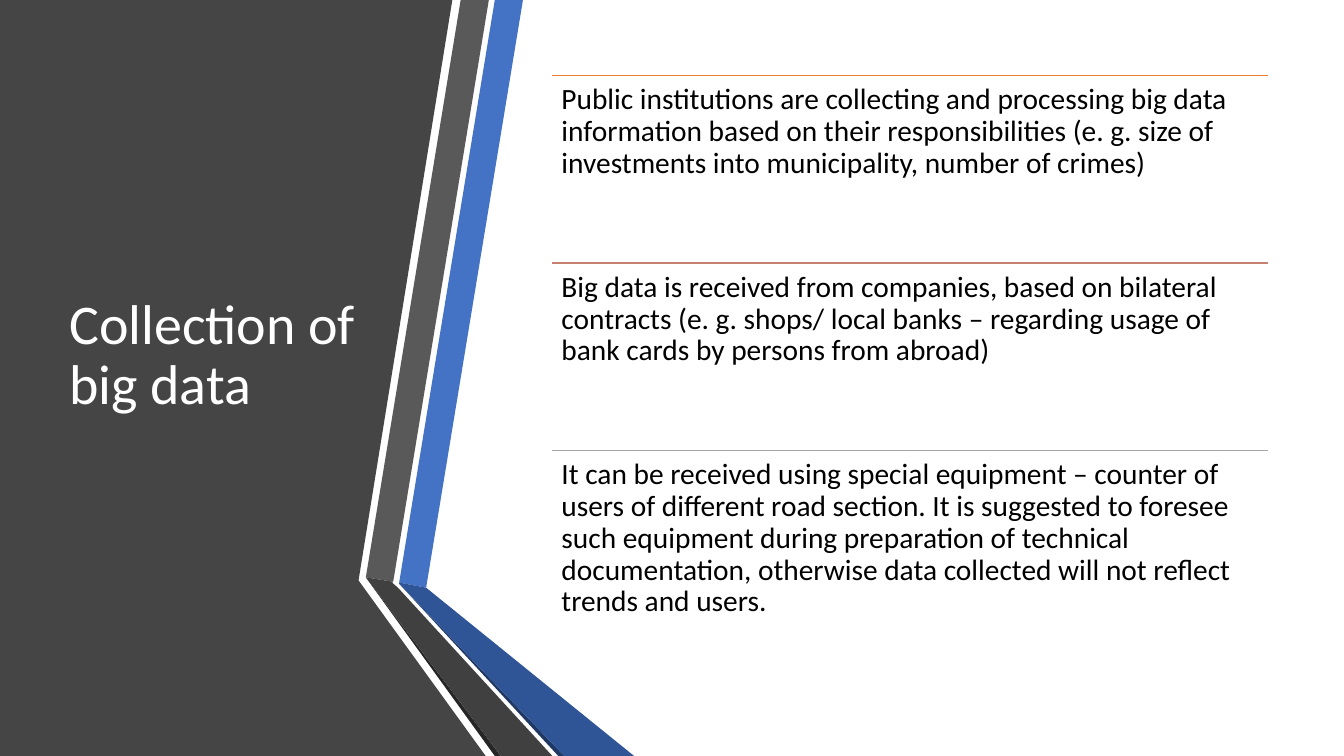
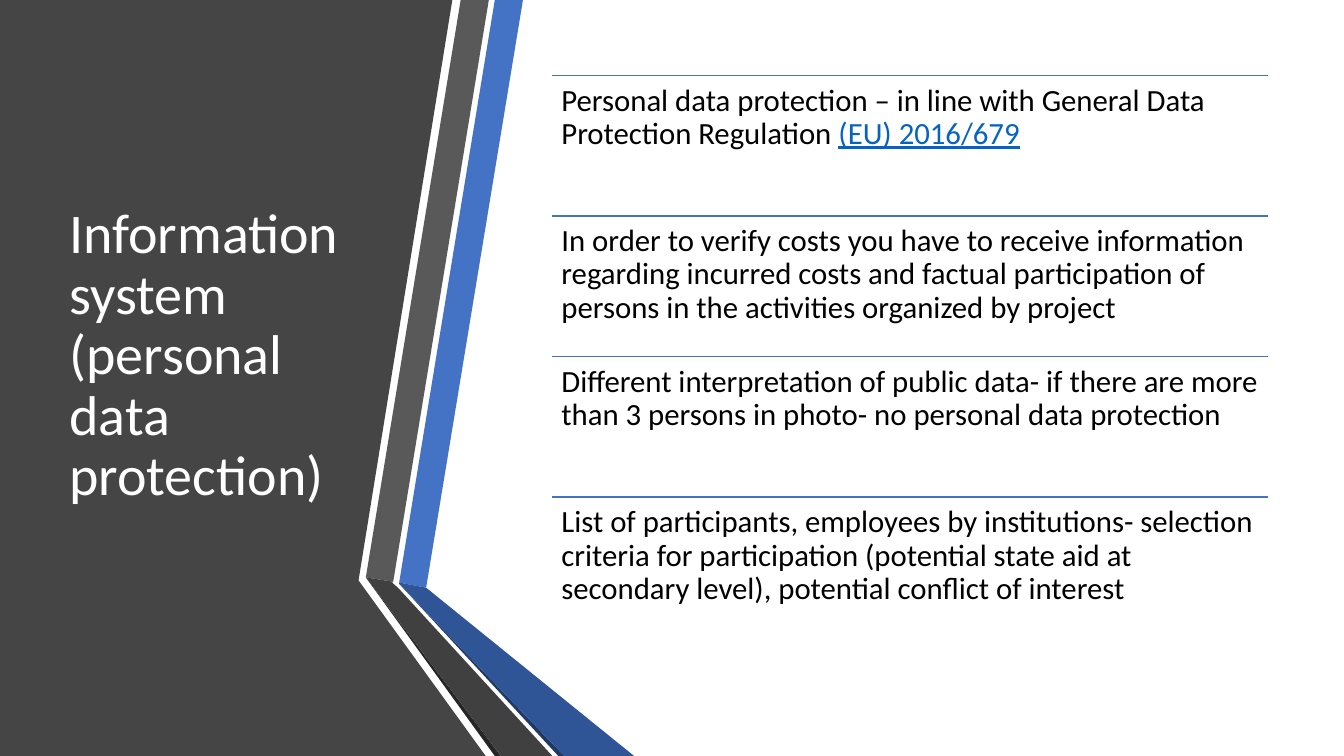
from pptx import Presentation
from pptx.dml.color import RGBColor
from pptx.enum.shapes import MSO_CONNECTOR
from pptx.enum.text import MSO_ANCHOR
from pptx.util import Cm, Pt
from lxml.etree import SubElement
from pptx.oxml.ns import qn

WHITE = RGBColor(0xFF, 0xFF, 0xFF)
BLACK = RGBColor(0x00, 0x00, 0x00)
PANEL = RGBColor(0x45, 0x45, 0x45)
BLUE = RGBColor(0x44, 0x72, 0xC4)
GRAY = RGBColor(0x59, 0x59, 0x59)
COAL = RGBColor(0x26, 0x26, 0x26)
NAVY = RGBColor(0x20, 0x38, 0x64)
DEEP = RGBColor(0x2F, 0x55, 0x97)
DARK = RGBColor(0x40, 0x40, 0x40)
LINK = RGBColor(0x05, 0x63, 0xC1)
ORANGE = RGBColor(0xED, 0x7D, 0x31)
ROSE = RGBColor(0xC4, 0x81, 0x70)
SILVER = RGBColor(0xA5, 0xA5, 0xA5)

WIDTH, HEIGHT = 33.87, 19.05
TOP, BODY = 1.9, 14.17
LEFT, SPAN = 13.92, 18.03

BANDS = [
    (PANEL, [(0, 0), (11.4, 0), (9.04, 14.61), (9.04, 14.63),
             (12.24, HEIGHT), (0, HEIGHT)]),
    (BLUE, [(10.06, 14.68), (10.74, 14.81), (13.18, 0), (12.47, 0)]),
    (GRAY, [(12.32, 0), (11.61, 0), (9.22, 14.55), (9.91, 14.66)]),
    (COAL, [(9.22, 14.55), (12.47, HEIGHT), (12.62, HEIGHT)]),
    (NAVY, [(10.06, 14.71), (14.07, HEIGHT), (14.22, HEIGHT)]),
    (DEEP, [(10.06, 14.71), (14.22, HEIGHT), (15.98, HEIGHT),
            (10.74, 14.81), (10.06, 14.68)]),
    (DARK, [(13.92, HEIGHT), (10.03, 14.81), (9.88, 14.68),
            (9.91, 14.66), (9.22, 14.55), (12.62, HEIGHT)]),
]


class Deck:
    font = "Calibri"

    def __init__(self):
        self.show = Presentation()
        self.show.slide_width = Cm(WIDTH)
        self.show.slide_height = Cm(HEIGHT)
        self.slide = None

    def page(self, title):
        self.slide = self.show.slides.add_slide(self.show.slide_layouts[6])
        for color, points in BANDS:
            self.band(color, points)
        frame = self.text(title, 1.5, TOP, 7.72, BODY, 40, WHITE)
        frame.vertical_anchor = MSO_ANCHOR.MIDDLE

    def band(self, color, points):
        spots = [(Cm(x), Cm(y)) for x, y in points]
        pen = self.slide.shapes.build_freeform(*spots[0])
        pen.add_line_segments(spots[1:], close=True)
        shape = pen.convert_to_shape()
        shape.shadow.inherit = False
        shape.fill.solid()
        shape.fill.fore_color.rgb = color
        shape.line.fill.background()

    def text(self, words, x, y, width, height, size, color):
        box = self.slide.shapes.add_textbox(Cm(x), Cm(y), Cm(width), Cm(height))
        frame = box.text_frame
        frame.word_wrap = True
        frame.text = words
        line = frame.paragraphs[0]
        line.line_spacing = 0.9
        self.style(line.runs[0], size, color)
        return frame

    def style(self, run, size, color):
        run.font.name = self.font
        run.font.size = Pt(size)
        run.font.color.rgb = color

    def rule(self, y, color):
        line = self.slide.shapes.add_connector(
            MSO_CONNECTOR.STRAIGHT, Cm(LEFT), Cm(y), Cm(LEFT + SPAN), Cm(y))
        line.line.color.rgb = color
        line.line.width = Pt(1)
        SubElement(line._element.spPr, qn("a:effectLst"))

    def items(self, rows, size):
        step = BODY / len(rows)
        frames = []
        for i, (color, words) in enumerate(rows):
            y = TOP + i * step
            self.rule(y, color)
            frame = self.text(words, LEFT, y, SPAN, step, size, BLACK)
            frame.margin_left = frame.margin_right = Cm(0.23)
            frame.margin_top = frame.margin_bottom = Cm(0.23)
            frames.append(frame)
        return frames

    def link(self, frame, words, size):
        run = frame.paragraphs[0].add_run()
        run.text = words
        self.style(run, size, LINK)
        run.font.underline = True


def main():
    deck = Deck()

    deck.page("Collection of big data")
    deck.items([
        (ORANGE, "Public institutions are collecting and processing big data "
                 "information based on their responsibilities (e. g. size of "
                 "investments into municipality, number of crimes)"),
        (ROSE, "Big data is received from companies, based on bilateral "
               "contracts (e. g. shops/ local banks – regarding usage of "
               "bank cards by persons from abroad)"),
        (SILVER, "It can be received using special equipment – counter of "
                 "users of different road section. It is suggested to foresee "
                 "such equipment during preparation of technical "
                 "documentation, otherwise data collected will not reflect "
                 "trends and users."),
    ], 21)

    deck.page("Information system (personal data protection)")
    frames = deck.items([
        (BLUE, "Personal data protection – in line with General Data "
               "Protection Regulation "),
        (BLUE, "In order to verify costs you have to receive information "
               "regarding incurred costs and factual participation of "
               "persons in the activities organized by project"),
        (BLUE, "Different interpretation of public data- if there are more "
               "than 3 persons in photo- no personal data protection"),
        (BLUE, "List of participants, employees by institutions- selection "
               "criteria for participation (potential state aid at "
               "secondary level), potential conflict of interest"),
    ], 22)
    deck.link(frames[0], "(EU) 2016/679", 22)

    deck.show.save("out.pptx")


if __name__ == "__main__":
    main()
